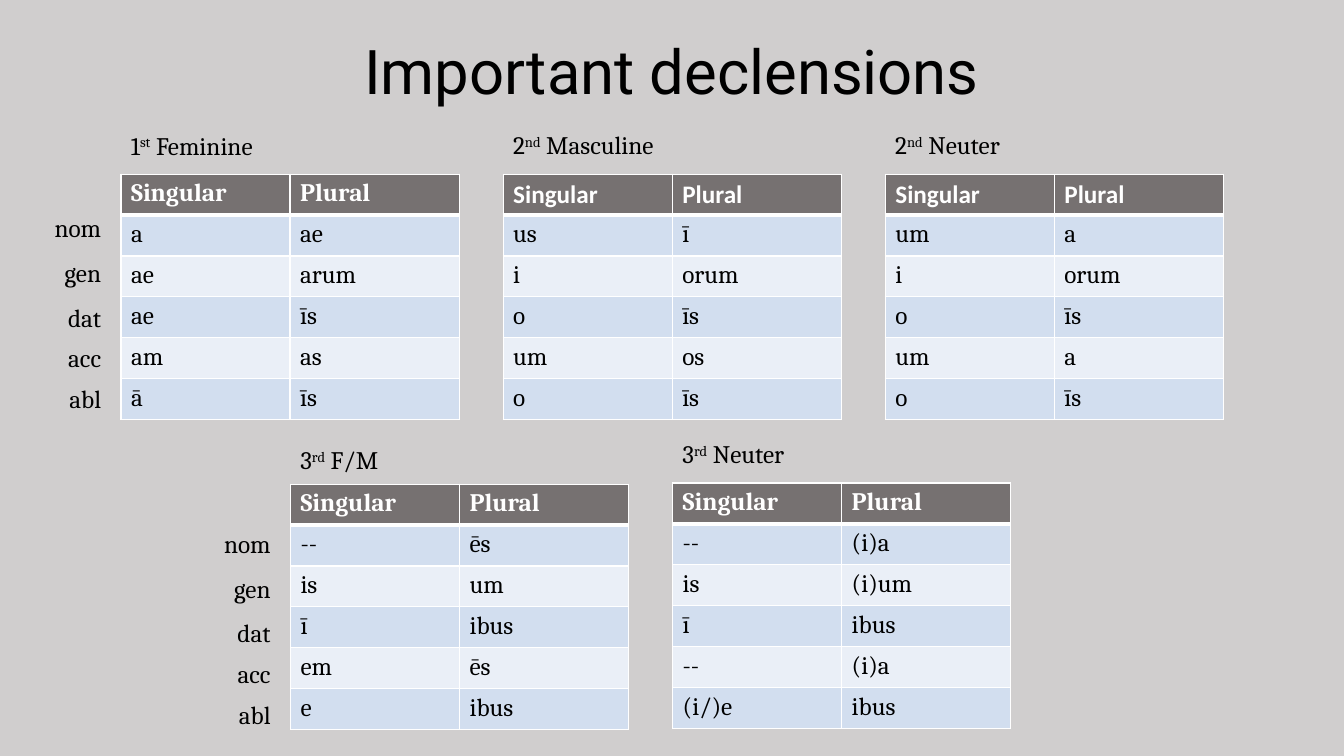
"""Build a slide of Latin declension endings."""
from dataclasses import dataclass

from lxml import etree
from pptx import Presentation
from pptx.dml.color import RGBColor
from pptx.enum import shapes, text
from pptx.oxml import ns
from pptx.util import Cm, Pt


@dataclass(frozen=True)
class Theme:
    background: str = "D0CECE"
    header: str = "767171"
    bands: tuple = ("D2DEEF", "EAEFF7")
    ink: str = "000000"
    white: str = "FFFFFF"
    title_font: str = "Roboto"
    body_font: str = "Cambria"
    alternate_font: str = "Calibri"
    title_size: int = 44
    body_size: int = 18
    rule: int = 1
    header_rule: int = 3


THEME = Theme()
TITLE = "Important declensions"
NUMBERS = ("Singular", "Plural")
CASES = ("nom", "gen", "dat", "acc", "abl")
CASE_OFFSETS = (0, 1.13, 2.26, 3.28, 4.31)

SLIDE_WIDTH, SLIDE_HEIGHT = 33.87, 19.05
COLUMN_WIDTH, ROW_HEIGHT = 4.26, 1.03
TABLE_STEP = 9.63
LABEL_HEIGHT = 1.02
CAPTION_WIDTH, CASE_WIDTH, CASE_GAP = 5.61, 1.73, 0.25

# fields: ordinal, suffix, gender, header font, caption top, table top, endings
ROWS = [
    {"left": 3.05, "cases_top": 5.23, "declensions": [
        ("1", "st", " Feminine", THEME.body_font, 3.16, 4.39,
         [("a", "ae"), ("ae", "arum"), ("ae", "īs"), ("am", "as"), ("ā", "īs")]),
        ("2", "nd", " Masculine", THEME.alternate_font, 3.14, 4.39,
         [("us", "ī"), ("i", "orum"), ("o", "īs"), ("um", "os"), ("o", "īs")]),
        ("2", "nd", " Neuter", THEME.alternate_font, 3.14, 4.39,
         [("um", "a"), ("i", "orum"), ("o", "īs"), ("um", "a"), ("o", "īs")]),
    ]},
    {"left": 7.32, "cases_top": 13.18, "declensions": [
        ("3", "rd", " F/M", THEME.body_font, 11.08, 12.2,
         [("--", "ēs"), ("is", "um"), ("ī", "ibus"), ("em", "ēs"), ("e", "ibus")]),
        ("3", "rd", " Neuter", THEME.body_font, 10.93, 12.17,
         [("--", "(i)a"), ("is", "(i)um"), ("ī", "ibus"), ("--", "(i)a"), ("(i/)e", "ibus")]),
    ]},
]


def style(paragraph, font=THEME.body_font, color=THEME.ink, size=THEME.body_size, bold=False):
    for run in paragraph.runs:
        run.font.name, run.font.size, run.font.bold = font, Pt(size), bold
        run.font.color.rgb = RGBColor.from_string(color)


def add_label(container, left, top, width, parts, align=text.PP_ALIGN.LEFT):
    label = container.add_textbox(Cm(left), Cm(top), Cm(width), Cm(LABEL_HEIGHT))
    label.text_frame.word_wrap = True
    label.text_frame.auto_size = text.MSO_AUTO_SIZE.SHAPE_TO_FIT_TEXT
    paragraph = label.text_frame.paragraphs[0]
    paragraph.alignment = align
    for part in parts:
        paragraph.add_run().text = part
    style(paragraph)
    return paragraph


def add_borders(cell, row):
    properties = cell._tc.get_or_add_tcPr()
    heavy = {"lnB": row == 0, "lnT": row == 1}
    for position, side in enumerate(("lnL", "lnR", "lnT", "lnB")):
        width = THEME.header_rule if heavy.get(side) else THEME.rule
        line = etree.Element(ns.qn(f"a:{side}"), w=str(Pt(width)))
        fill = etree.SubElement(line, ns.qn("a:solidFill"))
        etree.SubElement(fill, ns.qn("a:srgbClr"), val=THEME.white)
        properties.insert(position, line)


def add_endings(slide, left, top, header_font, endings):
    content = [NUMBERS, *endings]
    table = slide.shapes.add_table(
        len(content), len(NUMBERS), Cm(left), Cm(top),
        Cm(COLUMN_WIDTH * len(NUMBERS)), Cm(ROW_HEIGHT * len(content))).table
    for row, entries in enumerate(content):
        for column, entry in enumerate(entries):
            cell = table.cell(row, column)
            cell.text_frame.text = entry
            cell.fill.solid()
            if row == 0:
                style(cell.text_frame.paragraphs[0], header_font, THEME.white, bold=True)
                color = THEME.header
            else:
                style(cell.text_frame.paragraphs[0])
                color = THEME.bands[(row - 1) % 2]
            cell.fill.fore_color.rgb = RGBColor.from_string(color)
            add_borders(cell, row)


def add_backdrop(slide):
    backdrop = slide.shapes.add_shape(
        shapes.MSO_SHAPE.RECTANGLE, 0, 0, Cm(SLIDE_WIDTH), Cm(SLIDE_HEIGHT))
    backdrop.shadow.inherit = False
    backdrop.fill.solid()
    backdrop.fill.fore_color.rgb = RGBColor.from_string(THEME.background)
    backdrop.line.fill.background()
    slide.shapes._spTree.insert(2, backdrop._element)


def add_title(slide):
    title = slide.shapes.title
    title.left, title.top, title.width, title.height = Cm(2.33), Cm(0.03), Cm(29.21), Cm(3.68)
    title.text_frame.text = TITLE
    title.text_frame.vertical_anchor = text.MSO_ANCHOR.MIDDLE
    heading = title.text_frame.paragraphs[0]
    heading.alignment, heading.line_spacing = text.PP_ALIGN.CENTER, 0.9
    style(heading, THEME.title_font, size=THEME.title_size)


def main():
    deck = Presentation()
    deck.slide_width, deck.slide_height = Cm(SLIDE_WIDTH), Cm(SLIDE_HEIGHT)
    slide = deck.slides.add_slide(deck.slide_layouts[5])
    add_backdrop(slide)
    add_title(slide)
    for row in ROWS:
        for index, declension in enumerate(row["declensions"]):
            ordinal, suffix, gender, header_font, caption_top, table_top, endings = declension
            left = row["left"] + index * TABLE_STEP
            add_endings(slide, left, table_top, header_font, endings)
            caption = add_label(slide.shapes, left, caption_top, CAPTION_WIDTH,
                                (ordinal, suffix, gender))
            caption.runs[1].font._element.set("baseline", "30000")
        cases = slide.shapes.add_group_shape()
        for case, offset in zip(CASES, CASE_OFFSETS):
            add_label(cases.shapes, row["left"] - CASE_GAP - CASE_WIDTH,
                      row["cases_top"] + offset, CASE_WIDTH, (case,), text.PP_ALIGN.RIGHT)
    deck.save("out.pptx")


if __name__ == "__main__":
    main()
